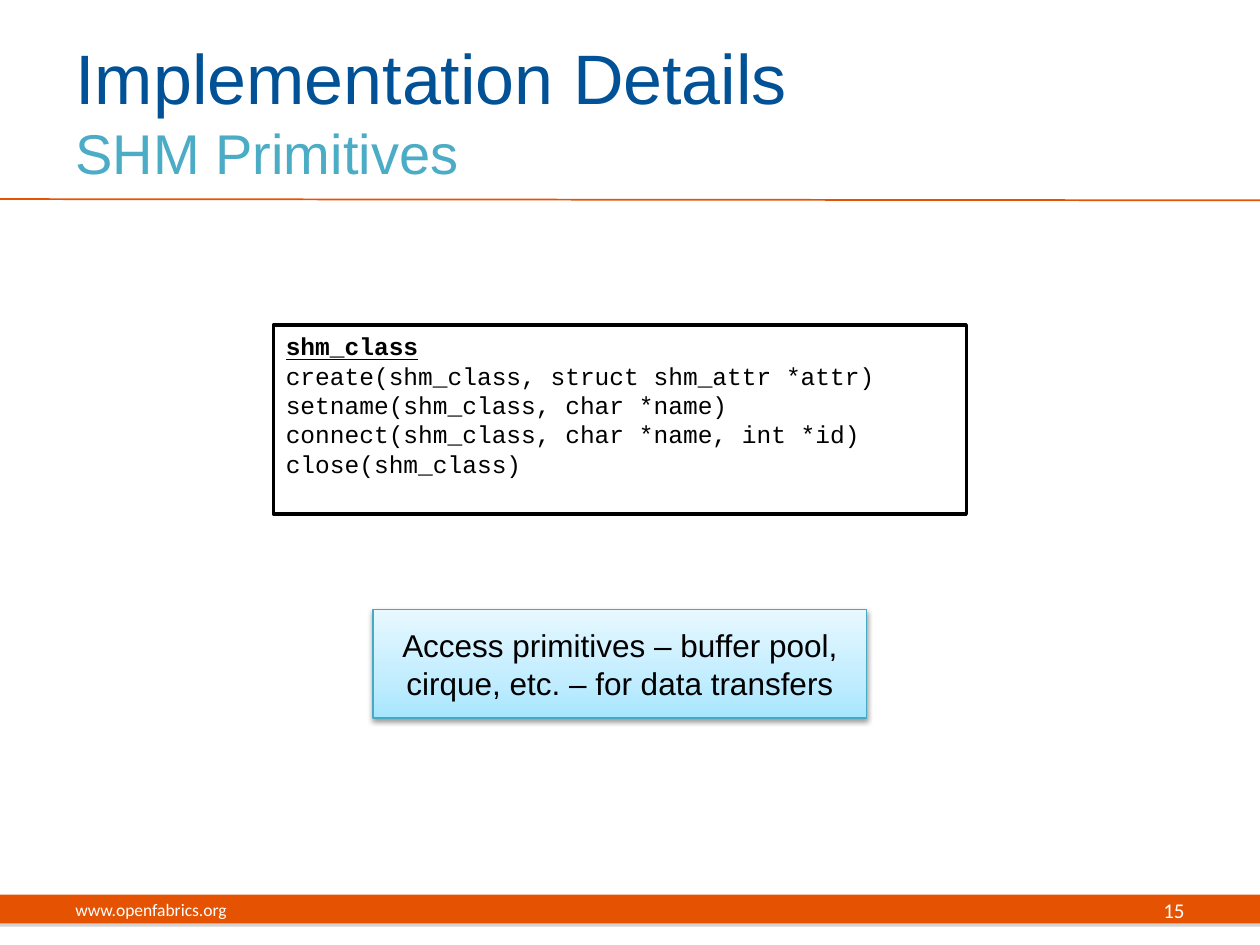
from dataclasses import dataclass
from typing import Optional

from lxml import etree
from pptx import Presentation
from pptx.dml.color import RGBColor
from pptx.enum import shapes, text
from pptx.oxml.ns import qn
from pptx.util import Inches, Pt


@dataclass(frozen=True)
class Theme:
    orange: str = "E55302"
    navy: str = "005195"
    teal: str = "4BACC6"
    teal_edge: str = "46AAC5"
    black: str = "000000"
    white: str = "FFFFFF"
    grey: str = "808080"
    sky: tuple = ((0, "A7E6FF"), (35, "C1EDFF"), (100, "E7F8FF"))
    sans: str = "Arial"
    footer_font: str = "Calibri"
    code_font: str = "Courier New"
    title_size: float = 40
    subtitle_size: float = 32
    note_size: float = 18
    code_size: float = 14
    number_size: float = 12
    address_size: float = 10


@dataclass(frozen=True)
class Area:
    left: float
    top: float
    width: float
    height: float

    def lengths(self) -> list:
        return [Inches(v) for v in (self.left, self.top, self.width, self.height)]


@dataclass(frozen=True)
class Style:
    font: str
    size: float
    color: str
    bold: bool = False
    underline: bool = False


@dataclass(frozen=True)
class Shadow:
    color: str
    alpha: int
    blur: float
    distance: float


THEME = Theme()


def add_run(paragraph, words: str, style: Style) -> None:
    run = paragraph.add_run()
    run.text = words
    font = run.font
    font.name, font.size = style.font, Pt(style.size)
    font.bold, font.underline = style.bold, style.underline
    font.color.rgb = RGBColor.from_string(style.color)


def prepare_frame(shape, anchor):
    frame = shape.text_frame
    frame.word_wrap = True
    frame.auto_size = text.MSO_AUTO_SIZE.NONE
    frame.vertical_anchor = anchor
    return frame


def add_color(parent, color: str):
    return etree.SubElement(parent, qn("a:srgbClr"), val=color)


def add_box(slide, area: Area, fill: Optional[str], line: Optional[str] = None,
            line_width: float = 0, shadow: Optional[Shadow] = None):
    box = slide.shapes.add_shape(shapes.MSO_SHAPE.RECTANGLE, *area.lengths())
    if fill:
        box.fill.solid()
        box.fill.fore_color.rgb = RGBColor.from_string(fill)
    else:
        box.fill.gradient()
        box.fill.gradient_angle = 90
        stops = box._element.spPr.find(".//" + qn("a:gsLst"))
        for stop in list(stops):
            stops.remove(stop)
        for position, color in THEME.sky:
            add_color(etree.SubElement(stops, qn("a:gs"), pos=str(position * 1000)), color)
    if line:
        box.line.color.rgb = RGBColor.from_string(line)
        box.line.width = Pt(line_width)
    else:
        box.line.fill.background()
    box.shadow.inherit = False
    if shadow:
        effects = box._element.spPr.find(qn("a:effectLst"))
        outer = etree.SubElement(
            effects, qn("a:outerShdw"), blurRad=str(Pt(shadow.blur)),
            dist=str(Pt(shadow.distance)), dir="5400000", rotWithShape="0")
        etree.SubElement(add_color(outer, shadow.color), qn("a:alpha"),
                         val=str(shadow.alpha * 1000))
    return box


def add_footer_text(slide, area: Area, words: str, size: float, align) -> None:
    frame = prepare_frame(slide.shapes.add_textbox(*area.lengths()), text.MSO_ANCHOR.MIDDLE)
    paragraph = frame.paragraphs[0]
    paragraph.alignment = align
    add_run(paragraph, words, Style(THEME.footer_font, size, THEME.white))


def add_rule(slide) -> None:
    rule = slide.shapes.add_connector(
        shapes.MSO_CONNECTOR.STRAIGHT, Inches(0), Inches(1.58), Inches(10), Inches(1.59))
    rule.line.color.rgb = RGBColor.from_string(THEME.orange)
    rule.line.width = Pt(1)
    etree.SubElement(rule._element.spPr, qn("a:effectLst"))


def fill_title(slide) -> None:
    title = slide.shapes.title
    title.left, title.top, title.width, title.height = Area(0.5, 0.25, 8.17, 1.25).lengths()
    heading = prepare_frame(title, text.MSO_ANCHOR.MIDDLE).paragraphs[0]
    heading.alignment = text.PP_ALIGN.LEFT
    add_run(heading, "Implementation Details", Style(THEME.sans, THEME.title_size, THEME.navy))
    heading.add_line_break()
    add_run(heading, "SHM Primitives", Style(THEME.sans, THEME.subtitle_size, THEME.teal))


def add_class_listing(slide) -> None:
    listing = add_box(slide, Area(2.17, 2.58, 5.5, 1.5), THEME.white, THEME.black, 2)
    frame = prepare_frame(listing, text.MSO_ANCHOR.TOP)
    calls = (
        "shm_class",
        "create(shm_class, struct shm_attr *attr)",
        "setname(shm_class, char *name)",
        "connect(shm_class, char *name, int *id)",
        "close(shm_class)",
    )
    for index, call in enumerate(calls):
        paragraph = frame.add_paragraph() if index else frame.paragraphs[0]
        paragraph.alignment = text.PP_ALIGN.LEFT
        heads = index == 0
        add_run(paragraph, call,
                Style(THEME.code_font, THEME.code_size, THEME.black, heads, heads))


def add_access_note(slide) -> None:
    note = add_box(slide, Area(2.96, 4.84, 3.92, 0.86), None, THEME.teal_edge, 0.75,
                   Shadow(THEME.black, 38, 3.1, 1.6))
    paragraph = prepare_frame(note, text.MSO_ANCHOR.MIDDLE).paragraphs[0]
    paragraph.alignment = text.PP_ALIGN.CENTER
    add_run(paragraph, "Access primitives – buffer pool, cirque, etc. – for data transfers",
            Style(THEME.sans, THEME.note_size, THEME.black))


def main() -> None:
    deck = Presentation()
    deck.slide_width, deck.slide_height = Inches(10), Inches(7.5)
    slide = deck.slides.add_slide(deck.slide_layouts[5])
    add_box(slide, Area(0, 7.1, 10, 0.23), THEME.orange, shadow=Shadow(THEME.grey, 35, 0, 1.8))
    add_rule(slide)
    fill_title(slide)
    add_footer_text(slide, Area(0.5, 7.02, 3.17, 0.4), "www.openfabrics.org",
                    THEME.address_size, text.PP_ALIGN.LEFT)
    add_footer_text(slide, Area(7.17, 7.02, 2.33, 0.4), "15",
                    THEME.number_size, text.PP_ALIGN.RIGHT)
    add_class_listing(slide)
    add_access_note(slide)
    deck.save("out.pptx")


if __name__ == "__main__":
    main()
